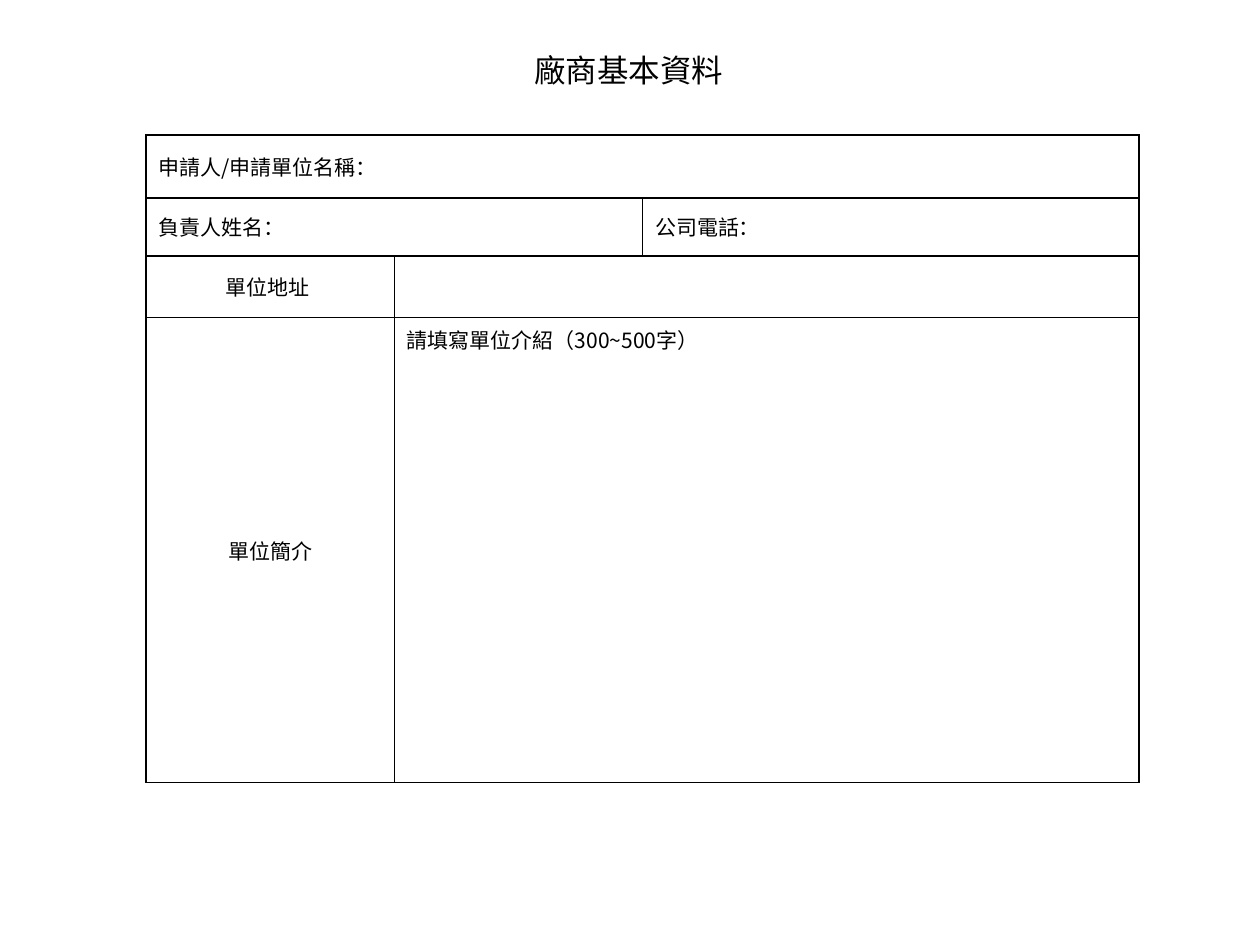
from lxml import etree
from pptx import Presentation
from pptx.dml.color import RGBColor
from pptx.enum.text import MSO_ANCHOR, MSO_AUTO_SIZE, PP_ALIGN
from pptx.oxml.ns import qn
from pptx.util import Inches, Pt

LEFT, CENTER = PP_ALIGN.LEFT, PP_ALIGN.CENTER
TOP, MIDDLE = MSO_ANCHOR.TOP, MSO_ANCHOR.MIDDLE
FIT_SHAPE = MSO_AUTO_SIZE.SHAPE_TO_FIT_TEXT

COLORS = {"ink": "000000", "paper": "FFFFFF"}
FONT = "Noto Sans CJK SC"
BORDER_WIDTH = Pt(1)

# The form sits on a grid of four equal columns, the last two joined
COLUMN_UNITS = [1, 1, 2]
ROW_HEIGHTS = [0.5, 0.46, 0.49, 3.69]

# (row, first column, last column, text, alignment, anchor)
FORM_CELLS = [
    (0, 0, 2, "申請人/申請單位名稱：", LEFT, MIDDLE),
    (1, 0, 1, "負責人姓名：", LEFT, MIDDLE),
    (1, 2, 2, "公司電話：", LEFT, MIDDLE),
    (2, 0, 0, "單位地址 ", CENTER, MIDDLE),
    (2, 1, 2, "", LEFT, TOP),
    (3, 0, 0, "單位簡介", CENTER, MIDDLE),
    (3, 1, 2, "請填寫單位介紹（300~500字）", LEFT, TOP),
]


def write_text(frame, text, size, alignment):
    para = frame.paragraphs[0]
    para.text = text
    para.alignment = alignment
    for owner in [para, *para.runs]:
        font = owner.font
        font.size = Pt(size)
        font.name = FONT
        font.color.rgb = RGBColor.from_string(COLORS["ink"])
    # East Asian glyphs take their typeface from a:ea
    for latin in list(para._p.iter(qn("a:latin"))):
        east_asian = etree.Element(qn("a:ea"), typeface=FONT)
        latin.addnext(east_asian)


def add_borders(cell):
    properties = cell._tc.get_or_add_tcPr()
    for index, side in enumerate(("lnL", "lnR", "lnT", "lnB")):
        line = etree.Element(qn(f"a:{side}"), w=str(BORDER_WIDTH))
        fill = etree.SubElement(line, qn("a:solidFill"))
        etree.SubElement(fill, qn("a:srgbClr"), val=COLORS["ink"])
        properties.insert(index, line)


def add_title(page, box):
    left, top, width, height = map(Inches, box)
    frame = page.shapes.add_textbox(left, top, width, height).text_frame
    frame.word_wrap = False
    frame.auto_size = FIT_SHAPE
    write_text(frame, "廠商基本資料", 18, LEFT)


def add_form(page, box):
    left, top, width, height = map(Inches, box)
    table = page.shapes.add_table(
        len(ROW_HEIGHTS), len(COLUMN_UNITS), left, top, width, height
    ).table
    table.first_row = table.horz_banding = False
    for column, units in zip(table.columns, COLUMN_UNITS):
        column.width = int(width * units / sum(COLUMN_UNITS))
    for row, share in zip(table.rows, ROW_HEIGHTS):
        row.height = int(height * share / sum(ROW_HEIGHTS))

    # Plain cells with a full set of rules
    for cell in table.iter_cells():
        cell.fill.background()
        add_borders(cell)

    # Merged fields and their labels
    for row, first, last, text, alignment, anchor in FORM_CELLS:
        cell = table.cell(row, first)
        if last > first:
            cell.merge(table.cell(row, last))
        cell.vertical_anchor = anchor
        write_text(cell.text_frame, text, 12, alignment)


def main():
    deck = Presentation()
    deck.slide_width, deck.slide_height = Inches(10), Inches(7.5)
    page = deck.slides.add_slide(deck.slide_layouts[6])
    page.background.fill.solid()
    page.background.fill.fore_color.rgb = RGBColor.from_string(COLORS["paper"])
    add_form(page, (1.16, 1.07, 7.88, sum(ROW_HEIGHTS)))
    add_title(page, (4.14, 0.36, 1.72, 0.4))
    deck.save("out.pptx")


if __name__ == "__main__":
    main()
